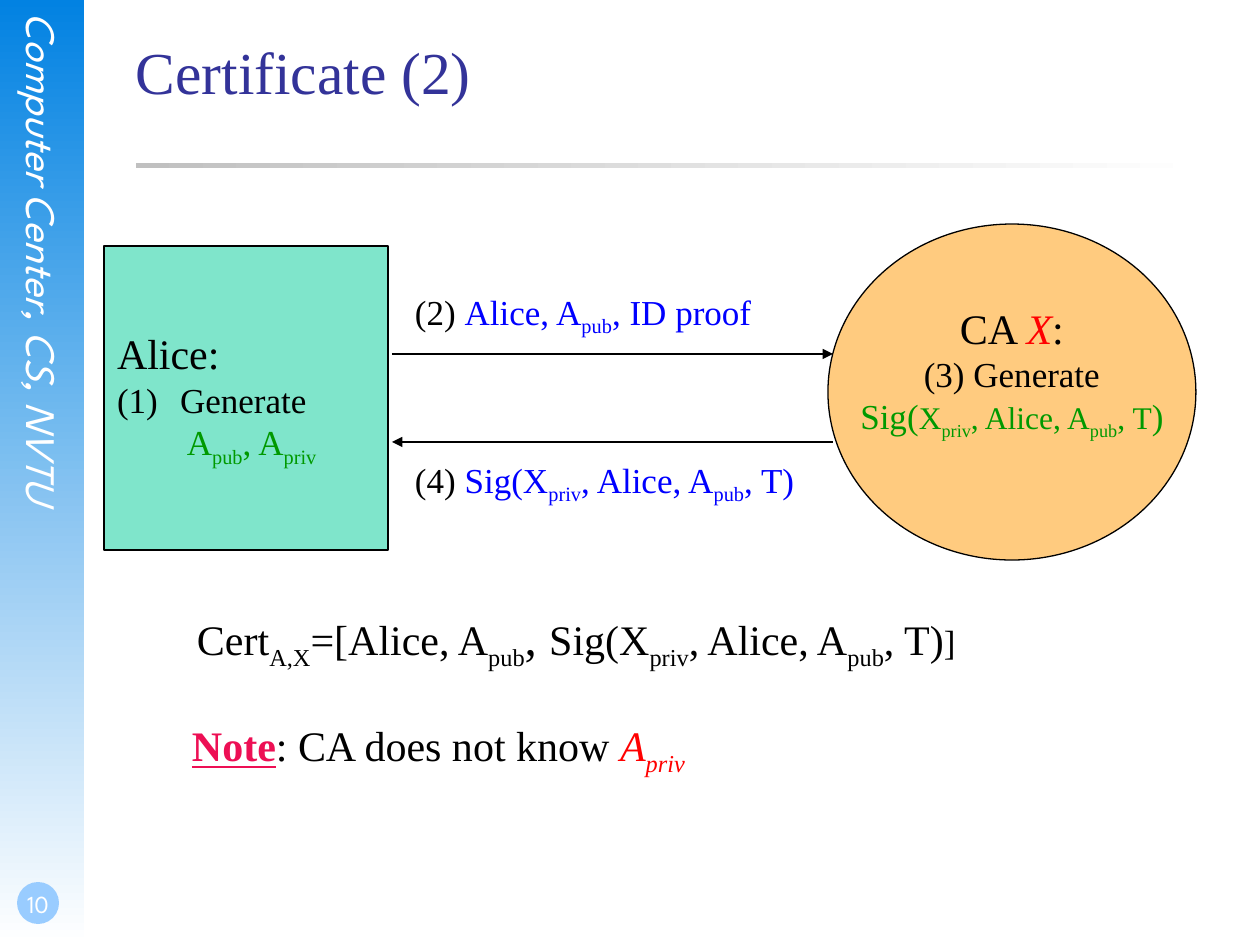
from lxml import etree
from pptx import Presentation
from pptx import util as u
from pptx.dml.color import RGBColor
from pptx.enum import shapes, text
from pptx.oxml.ns import qn

HUES = {
    "black": "000000", "white": "FFFFFF", "sky": "0282E2", "badge": "99CCFF",
    "title": "333399", "rule": "C0C0C0", "mint": "00CC99", "orange": "FF9900",
    "green": "009900", "blue": "0000FF", "red": "FF0000", "pink": "ED0F54",
}
SERIF, SANS = "Times New Roman", "League Spartan"
PAD = (13, 6, 13, 6)
LEFT, MID = text.PP_ALIGN.LEFT, text.PP_ALIGN.CENTER
TOP, CORE, BASE = (text.MSO_ANCHOR.TOP, text.MSO_ANCHOR.MIDDLE,
                   text.MSO_ANCHOR.BOTTOM)


def px(n):
    return u.Emu(round(n * 914400 / 126))


def rgb(name):
    return RGBColor.from_string(HUES[name])


def frame(shape, pad=PAD, wrap=False, anchor=TOP):
    tf = shape.text_frame
    tf.word_wrap, tf.vertical_anchor = wrap, anchor
    (tf.margin_left, tf.margin_top,
     tf.margin_right, tf.margin_bottom) = map(px, pad)
    return tf


def write(para, size, *parts, font=SERIF, align=LEFT):
    """Each part is (words, hue, font settings); ~marks~ enclose a subscript."""
    para.alignment = align
    for words, hue, *extra in parts:
        for i, piece in enumerate(words.split("~")):
            if not piece:
                continue
            run = para.add_run()
            run.text = piece
            run.font.name, run.font.size = font, u.Pt(size)
            run.font.color.rgb = rgb(hue)
            for key, value in (extra[0] if extra else {}).items():
                setattr(run.font, key, value)
            if i % 2:
                run._r.get_or_add_rPr().set("baseline", "-25000")


def label(slide, box, size, *parts, pad=PAD, wrap=False, anchor=TOP, **style):
    shape = slide.shapes.add_textbox(*map(px, box))
    tf = frame(shape, pad, wrap, anchor)
    write(tf.paragraphs[0], size, *parts, **style)
    return tf


def solid(slide, kind, box, hue, alpha=None, edge=False):
    shape = slide.shapes.add_shape(kind, *map(px, box))
    shape.shadow.inherit = False
    shape.fill.solid()
    shape.fill.fore_color.rgb = rgb(hue)
    if alpha:
        tone = shape.fill._xPr.find(".//" + qn("a:srgbClr"))
        etree.SubElement(tone, qn("a:alpha")).set("val", str(alpha * 1000))
    if edge:
        shape.line.color.rgb = rgb("black")
        shape.line.width = u.Pt(0.75)
    else:
        shape.line.fill.background()
    return shape


def fade(slide, box, hue, angle):
    shape = solid(slide, shapes.MSO_SHAPE.RECTANGLE, box, hue)
    shape.fill.gradient()
    shape.fill.gradient_angle = angle
    for stop, name in zip(shape.fill.gradient_stops, (hue, "white")):
        stop.color.rgb = rgb(name)


def arrow(slide, start, end):
    line = slide.shapes.add_connector(
        shapes.MSO_CONNECTOR.STRAIGHT, *map(px, start + end))
    line.line.color.rgb = rgb("black")
    line.line.width = u.Pt(0.75)
    etree.SubElement(line.line._get_or_add_ln(),
                     qn("a:tailEnd")).set("type", "triangle")
    etree.SubElement(line._element.spPr, qn("a:effectLst"))


def sidebar(slide, x, y, w, h):
    fade(slide, (x, y, w, h), "sky", 270)
    tf = label(slide, (x + 19, y + 13, 50, 644), 24,
               ("Computer Center, CS, NVTU", "white", {"italic": True}),
               pad=(0, 0, 0, 0), wrap=True, font=SANS)
    tf._txBody.bodyPr.set("vert", "eaVert")
    # Page badge
    solid(slide, shapes.MSO_SHAPE.OVAL, (x + 17, y + h - 63, 42, 42), "badge")
    label(slide, (x, y + h - 84, 73, 63), 14, ("10", "white"),
          pad=(3, 0, 0, 6), wrap=True, anchor=BASE, font=SANS, align=MID)


def header(slide, x, y, w, h):
    fade(slide, (x, y + 128, w, 5), "rule", 0)
    label(slide, (x, y, w, h), 34, ("Certificate (2)", "title"),
          pad=(0, 0, 0, 0), wrap=True)


def alice(slide, x, y, w, h):
    shape = solid(slide, shapes.MSO_SHAPE.RECTANGLE, (x, y, w, h),
                  "mint", 50, True)
    tf = frame(shape, anchor=CORE)
    name, step, keys = (tf.paragraphs[0], tf.add_paragraph(),
                        tf.add_paragraph())
    write(name, 24, ("Alice:", "black"))
    write(step, 20, ("Generate", "black"))
    write(keys, 20, (" A~pub~, A~priv~", "green"))
    # Hanging number, with the keys aligned under its text
    for para, hang in ((name, 63), (step, 63), (keys, 0)):
        prop = para._p.get_or_add_pPr()
        prop.set("marL", str(px(63)))
        prop.set("indent", str(-px(hang)))
    mark = etree.SubElement(step._p.get_or_add_pPr(), qn("a:buAutoNum"))
    mark.set("type", "arabicParenBoth")


def issuer(slide, x, y, w, h):
    shape = solid(slide, shapes.MSO_SHAPE.OVAL, (x, y, w, h),
                  "orange", 50, True)
    # The deeper bottom margin lifts the text above the centre
    tf = frame(shape, (13, 6, 13, 46), anchor=CORE)
    write(tf.paragraphs[0], 24, ("CA ", "black"),
          ("X", "red", {"italic": True}), (":", "black"), align=MID)
    write(tf.add_paragraph(), 20, ("(3) Generate", "black"), align=MID)
    write(tf.add_paragraph(), 20, ("Sig(", "green"),
          ("X~priv~, Alice, A~pub~, T", "green", {"size": u.Pt(18)}),
          (")", "green"), align=MID)


def exchange(slide, x, y, w, h):
    out, back = y + 70, y + 158
    arrow(slide, (x, out), (x + w, out))
    label(slide, (x + 10, y, 367, 55), 20,
          ("(2) ", "black"), ("Alice, A~pub~, ID proof", "blue"))
    arrow(slide, (x + w, back), (x, back))
    label(slide, (x + 10, y + h - 55, 415, 55), 20,
          ("(4) ", "black"), ("Sig(X~priv~, Alice, A~pub~, T)", "blue"))


def summary(slide, x, y, w, h):
    label(slide, (x + 5, y, w - 5, 72), 24,
          ("Cert~A,X~=[Alice, A~pub~", "black"),
          (", ", "black", {"size": u.Pt(28)}),
          ("Sig(X~priv~, Alice, A~pub~, T)", "black"),
          ("]", "black", {"size": u.Pt(20)}))
    label(slide, (x, y + h - 64, 529, 64), 24,
          ("Note", "pink", {"bold": True, "underline": True}),
          (": CA does not know ", "black"),
          ("A~priv~", "red", {"italic": True}))


def main():
    deck = Presentation()
    deck.slide_width, deck.slide_height = px(1260), px(945)
    slide = deck.slides.add_slide(deck.slide_layouts[6])
    sidebar(slide, 0, 0, 84, 945)
    header(slide, 136, 35, 1071, 158)
    alice(slide, 104, 246, 284, 304)
    issuer(slide, 828, 224, 368, 336)
    exchange(slide, 392, 284, 441, 223)
    summary(slide, 179, 601, 823, 177)
    deck.save("out.pptx")


if __name__ == "__main__":
    main()
